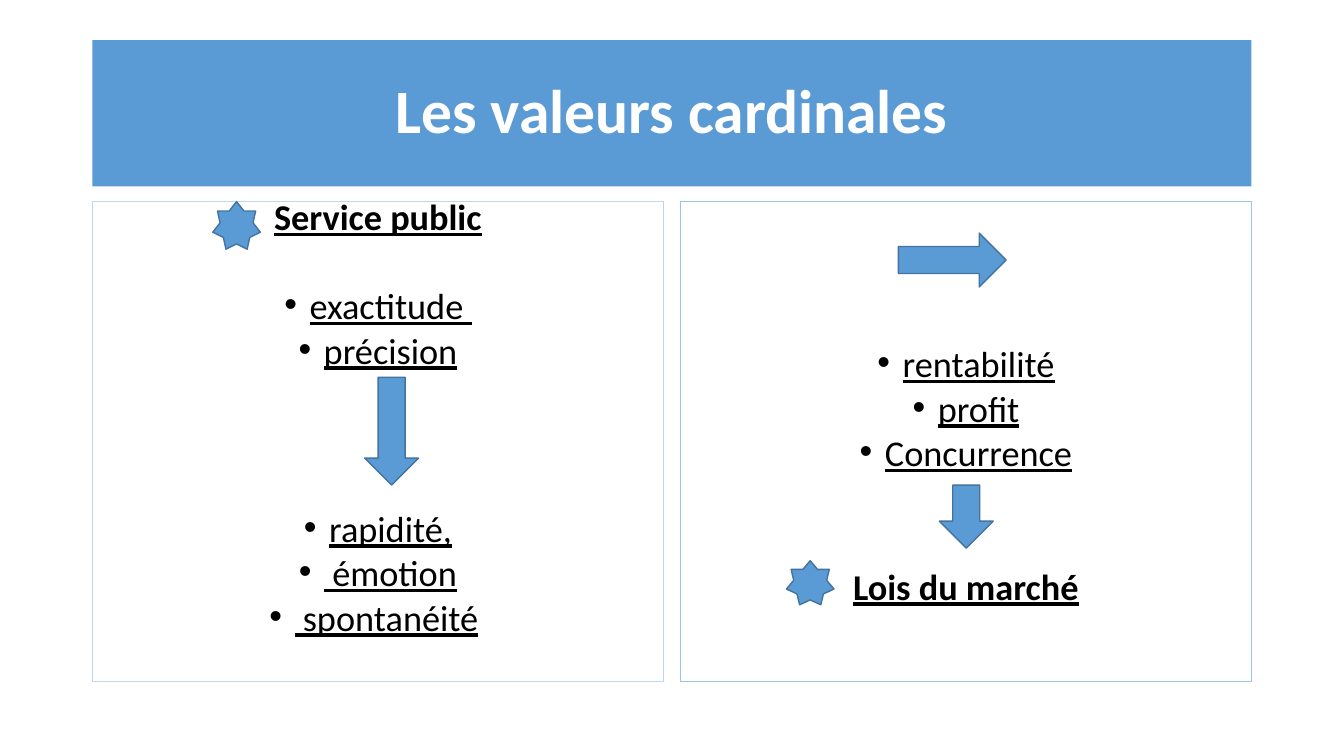
from dataclasses import dataclass

from lxml.etree import SubElement
from pptx import Presentation
from pptx.dml.color import RGBColor
from pptx.enum.shapes import MSO_SHAPE
from pptx.enum.text import MSO_ANCHOR, PP_ALIGN
from pptx.oxml.ns import qn
from pptx.shapes.autoshape import Shape
from pptx.slide import Slide
from pptx.text.text import _Paragraph
from pptx.util import Pt

BLUE = RGBColor(0x5B, 0x9B, 0xD5)
DARK_BLUE = RGBColor(0x43, 0x73, 0x9E)
PALE_BLUE = RGBColor(0xBD, 0xD7, 0xEE)
SOFT_BLUE = RGBColor(0x9D, 0xC3, 0xE6)
WHITE = RGBColor(0xFF, 0xFF, 0xFF)
BLACK = RGBColor(0x00, 0x00, 0x00)

FONT = "Calibri"
TITLE_SIZE = 44
BODY_SIZE = 25.9
SPACE_BEFORE = 10
LINE_PITCH = 31.8
INDENT = Pt(18)


@dataclass(frozen=True)
class Box:
    left: float
    top: float
    width: float
    height: float


@dataclass(frozen=True)
class Line:
    text: str
    heading: bool = False
    skipped_lines: int = 0
    plain_tail: str = ""


@dataclass(frozen=True)
class Panel:
    box: Box
    border: RGBColor
    top_inset: float
    lines: tuple[Line, ...]


@dataclass(frozen=True)
class Symbol:
    kind: MSO_SHAPE
    box: Box


TITLE_BOX = Box(66, 28.75, 828, 104.4)

PANELS = (
    Panel(Box(66, 144, 408, 342.6), PALE_BLUE, 3.6, (
        Line("Service public", heading=True),
        Line("exactitude ", skipped_lines=1),
        Line("précision"),
        Line("rapidité,", skipped_lines=3),
        Line(" émotion"),
        Line(" spontanéité", plain_tail=" "),
    )),
    Panel(Box(486, 144, 408, 342.6), SOFT_BLUE, 108.6, (
        Line("rentabilité"),
        Line("profit"),
        Line("Concurrence"),
        Line("Lois du marché", heading=True, skipped_lines=2),
    )),
)

SYMBOLS = (
    Symbol(MSO_SHAPE.DOWN_ARROW, Box(260.5, 269.5, 38.5, 77)),
    Symbol(MSO_SHAPE.RIGHT_ARROW, Box(641.75, 166.5, 77, 38.5)),
    Symbol(MSO_SHAPE.DOWN_ARROW, Box(671, 346.5, 38.5, 45)),
    Symbol(MSO_SHAPE.STAR_7_POINT, Box(152, 144, 34, 34)),
    Symbol(MSO_SHAPE.STAR_7_POINT, Box(561.75, 400.5, 34, 31.5)),
)


def add_plain_shape(slide: Slide, kind: MSO_SHAPE, box: Box) -> Shape:
    """Add a preset shape without shadow, fill or outline."""
    shape = slide.shapes.add_shape(
        kind, Pt(box.left), Pt(box.top), Pt(box.width), Pt(box.height)
    )
    shape.shadow.inherit = False
    shape.fill.background()
    shape.line.fill.background()
    return shape


def fill_shape(shape: Shape, color: RGBColor) -> None:
    shape.fill.solid()
    shape.fill.fore_color.rgb = color


def outline_shape(shape: Shape, color: RGBColor, width: float) -> None:
    shape.line.color.rgb = color
    shape.line.width = Pt(width)


def add_run(paragraph: _Paragraph, text: str, size: float, color: RGBColor,
            bold: bool = False, underline: bool = False) -> None:
    run = paragraph.add_run()
    run.text = text
    run.font.name = FONT
    run.font.size = Pt(size)
    run.font.color.rgb = color
    run.font.bold = bold
    run.font.underline = underline


def add_bullet(paragraph: _Paragraph) -> None:
    properties = paragraph._p.get_or_add_pPr()
    properties.set("marL", str(INDENT))
    properties.set("indent", str(-INDENT))
    SubElement(properties, qn("a:buFont"), typeface="Arial")
    SubElement(properties, qn("a:buChar"), char="•")


def add_title(slide: Slide) -> None:
    shape = add_plain_shape(slide, MSO_SHAPE.RECTANGLE, TITLE_BOX)
    fill_shape(shape, BLUE)
    shape.text_frame.word_wrap = True
    shape.text_frame.vertical_anchor = MSO_ANCHOR.MIDDLE
    paragraph = shape.text_frame.paragraphs[0]
    paragraph.alignment = PP_ALIGN.CENTER
    paragraph.line_spacing = 0.9
    add_run(paragraph, "Les valeurs cardinales", TITLE_SIZE, WHITE, bold=True)


def add_panel(slide: Slide, panel: Panel) -> None:
    shape = add_plain_shape(slide, MSO_SHAPE.RECTANGLE, panel.box)
    outline_shape(shape, panel.border, 0.75)
    frame = shape.text_frame
    frame.word_wrap = True
    frame.vertical_anchor = MSO_ANCHOR.TOP
    frame.margin_top = Pt(panel.top_inset)
    for index, line in enumerate(panel.lines):
        paragraph = frame.add_paragraph() if index else frame.paragraphs[0]
        paragraph.alignment = PP_ALIGN.CENTER
        paragraph.line_spacing = 0.7
        paragraph.space_before = Pt(SPACE_BEFORE + line.skipped_lines * LINE_PITCH)
        if not line.heading:
            add_bullet(paragraph)
        add_run(paragraph, line.text, BODY_SIZE, BLACK, line.heading, underline=True)
        if line.plain_tail:
            add_run(paragraph, line.plain_tail, BODY_SIZE, BLACK)


def add_symbol(slide: Slide, symbol: Symbol) -> None:
    shape = add_plain_shape(slide, symbol.kind, symbol.box)
    fill_shape(shape, BLUE)
    outline_shape(shape, DARK_BLUE, 1)


def main() -> None:
    presentation = Presentation()
    presentation.slide_width = Pt(960)
    presentation.slide_height = Pt(540)
    slide = presentation.slides.add_slide(presentation.slide_layouts[6])
    add_title(slide)
    for panel in PANELS:
        add_panel(slide, panel)
    for symbol in SYMBOLS:
        add_symbol(slide, symbol)
    presentation.save("out.pptx")


if __name__ == "__main__":
    main()
